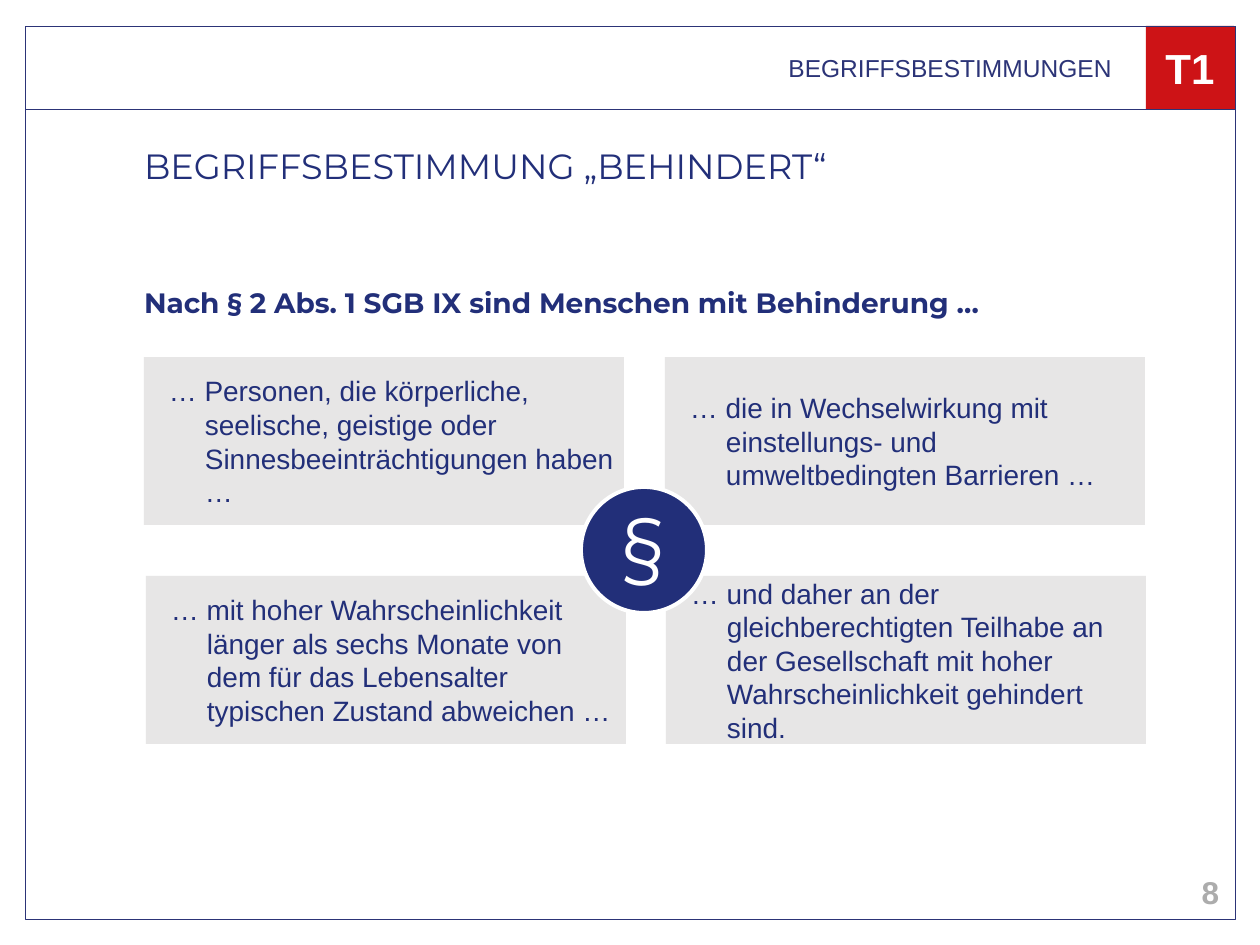
from dataclasses import dataclass

from pptx import Presentation
from pptx import util as u
from pptx.dml.color import RGBColor
from pptx.enum import shapes, text

PX = u.Inches(1) / 126
LEFT, CENTER, RIGHT = text.PP_ALIGN.LEFT, text.PP_ALIGN.CENTER, text.PP_ALIGN.RIGHT
TOP, MIDDLE = text.MSO_ANCHOR.TOP, text.MSO_ANCHOR.MIDDLE
RECT, OVAL = shapes.MSO_SHAPE.RECTANGLE, shapes.MSO_SHAPE.OVAL


@dataclass(frozen=True)
class Theme:
    navy: str = "222F79"
    frame: str = "2C3477"
    red: str = "CD1316"
    card: str = "E7E6E6"
    grey: str = "ACACAC"
    white: str = "FFFFFF"
    head_font: str = "Montserrat"
    body_font: str = "Arial"
    chapter: int = 14
    body: int = 16
    number: int = 18
    title: int = 20
    badge: int = 24
    symbol: int = 48


def px(n):
    return u.Emu(round(n * PX))


class SlideBuilder:
    def __init__(self, s, theme):
        self.s, self.theme = s, theme

    def set_text(self, shape, words, size, color, font=None, bold=False, align=LEFT,
                 anchor=TOP, insets=(0, 0, 0, 0), spacing=None):
        """Fill a shape's text frame with one formatted paragraph."""
        tf = shape.text_frame
        tf.word_wrap = True
        tf.auto_size = text.MSO_AUTO_SIZE.NONE
        tf.vertical_anchor = anchor
        tf.margin_left, tf.margin_top, tf.margin_right, tf.margin_bottom = map(px, insets)
        tf.text = words
        p = tf.paragraphs[0]
        p.alignment, p.line_spacing = align, spacing
        p.font.name = font or self.theme.body_font
        p.font.size, p.font.bold = u.Pt(size), bold
        p.font.color.rgb = RGBColor.from_string(color)
        return p

    def title(self, box, words):
        sp = self.s.shapes.title
        sp.left, sp.top, sp.width, sp.height = map(px, box)
        self.set_text(sp, words, self.theme.title, self.theme.navy,
                      self.theme.head_font, spacing=0.9)

    def label(self, box, words, size, color, **style):
        sp = self.s.shapes.add_textbox(*map(px, box))
        self.set_text(sp, words, size, color, **style)

    def shape(self, kind, box, fill=None, line=None, width=0.25):
        sp = self.s.shapes.add_shape(kind, *map(px, box))
        sp.shadow.inherit = False
        if fill:
            sp.fill.solid()
            sp.fill.fore_color.rgb = RGBColor.from_string(fill)
        else:
            sp.fill.background()
        if line:
            sp.line.color.rgb = RGBColor.from_string(line)
            sp.line.width = u.Pt(width)
        else:
            sp.line.fill.background()
        return sp

    def card(self, box, words):
        """Grey box whose text hangs behind its leading ellipsis."""
        sp = self.shape(RECT, box, self.theme.card)
        p = self.set_text(sp, words, self.theme.body, self.theme.navy,
                          anchor=MIDDLE, insets=(25, 0, 10, 0))
        indent = px(36)
        pPr = p._p.get_or_add_pPr()
        pPr.set("marL", str(indent))
        pPr.set("indent", str(-indent))


def main():
    prs = Presentation()
    prs.slide_width, prs.slide_height = px(1260), px(945)
    theme = Theme()
    slide = SlideBuilder(prs.slides.add_slide(prs.slide_layouts[5]), theme)

    badge, header = (1146, 26, 88, 83), (25, 26, 1210, 83)
    slide.shape(RECT, badge, theme.red, theme.red)
    slide.shape(RECT, header, line=theme.frame)
    slide.shape(RECT, (25, 26, 1210, 893), line=theme.frame)

    slide.title((144, 149, 961, 83), "BEGRIFFSBESTIMMUNG „BEHINDERT“")
    slide.label((25, 26, 1120, 83), "BEGRIFFSBESTIMMUNGEN", theme.chapter, theme.frame,
                align=RIGHT, anchor=MIDDLE, insets=(0, 0, 33, 0))
    slide.label(badge, "T1", theme.badge, theme.white, bold=True,
                align=CENTER, anchor=MIDDLE)
    slide.label((949, 867, 283, 50), "8", theme.number, theme.grey, bold=True,
                align=RIGHT, anchor=MIDDLE, insets=(13, 6, 13, 6))
    slide.label((144, 275, 963, 40), "Nach § 2 Abs. 1 SGB IX sind Menschen mit Behinderung …",
                theme.body, theme.navy, font=theme.head_font, bold=True, spacing=1.3)

    cards = [
        (144, 357, "… Personen, die körperliche, seelische, geistige oder "
                   "Sinnesbeeinträchtigungen haben …"),
        (665, 357, "… die in Wechselwirkung mit einstellungs- und "
                   "umweltbedingten Barrieren …"),
        (146, 576, "… mit hoher Wahrscheinlichkeit länger als sechs Monate von "
                   "dem für das Lebensalter typischen Zustand abweichen …"),
        (666, 576, "… und daher an der gleichberechtigten Teilhabe an der Gesellschaft "
                   "mit hoher Wahrscheinlichkeit gehindert sind."),
    ]
    for left, top, words in cards:
        slide.card((left, top, 480, 168), words)

    slide.shape(OVAL, (581, 487, 126, 126), theme.navy, theme.white, 2.25)
    slide.label((588, 488, 110, 115), "§", theme.symbol, theme.white,
                font=theme.head_font, align=CENTER, insets=(13, 6, 13, 6))

    prs.save("out.pptx")


if __name__ == "__main__":
    main()
